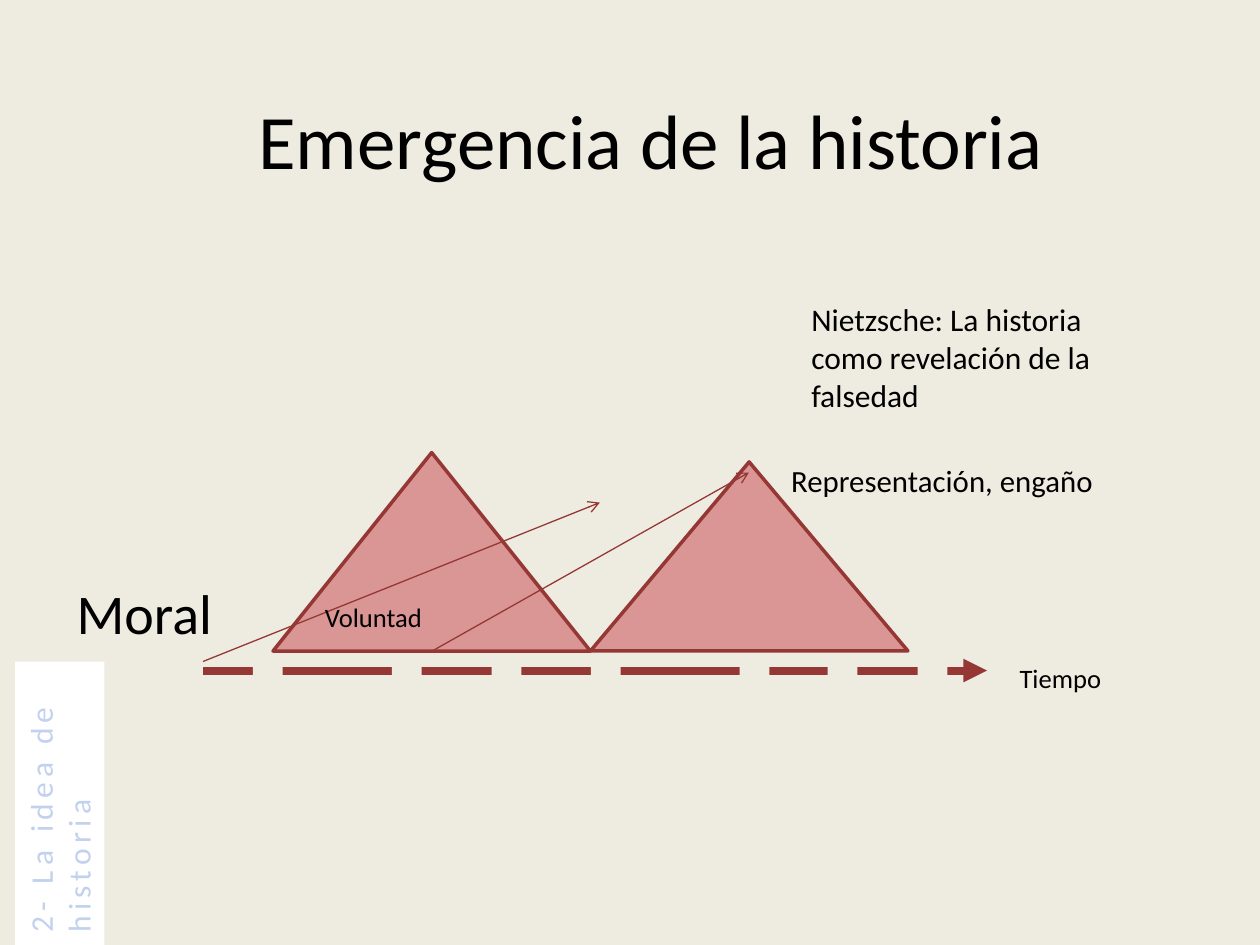
import pptx
import pptx.dml.color
import pptx.enum.shapes
import pptx.enum.text
import pptx.oxml
import pptx.oxml.ns
import pptx.util

Pt = pptx.util.Pt
SHAPES = pptx.enum.shapes.MSO_SHAPE
ALIGN = pptx.enum.text.PP_ALIGN
ANCHOR = pptx.enum.text.MSO_ANCHOR

FONT = "Calibri"
PAPER, INK, WHITE = "EEECE1", "000000", "FFFFFF"
ROSE, WINE, PALE_BLUE = "D99694", "953735", "C2D1ED"

# text, (left, top, width, height), size
TITLE = ("Emergencia de la historia", (48, 34, 648, 90), 44)
QUOTE = ("Nietzsche: La historia como revelación de la falsedad",
         (456.5, 168, 193, 72.7), 18)
SECTION = ("2- La idea de historia", (-46.8, 433.5, 162, 51), 18)
# the same, then line spacing
LABELS = [
    ("Moral", (36.7, 327, 102, 51), 32, 1),
    ("Tiempo", (575.5, 378, 85, 22.3), 15.2, 0.8),
    ("Voluntad", (178.5, 343.5, 85, 22.3), 15.2, 0.8),
    ("Representación, engaño", (445, 264.3, 198.7, 39.6), 17.6, 0.8),
]
HANGING = 27

BASELINE, TRIANGLE_LEFT, TRIANGLE_WIDTH = 372, 156, 181.4
TRIANGLE_HEIGHTS = [113.4, 108]

# start, end, line width, arrowhead
TIME_AXIS = ((116, 383.2), (564, 383.2), 4.5, "triangle")
RISING_ARROWS = [
    ((116, 378), (342.8, 287.2), 0.75, "arrow"),
    ((247, 372), (428, 270), 0.75, "arrow"),
]
GAP_LEFTS = [144.6, 224, 281, 337.7, 422.7, 473, 524.4]
GAP_TOP, GAP_WIDTH, GAP_HEIGHT = 378, 17, 11.4


def color(hex_code):
    return pptx.dml.color.RGBColor.from_string(hex_code)


def points(values):
    return [Pt(value) for value in values]


def add_filled(slide, preset, box, fill, outline=None):
    shape = slide.shapes.add_shape(preset, *points(box))
    shape.shadow.inherit = False
    shape.fill.solid()
    shape.fill.fore_color.rgb = color(fill)
    if outline:
        shape.line.color.rgb = color(outline)
        shape.line.width = Pt(2)
    else:
        shape.line.fill.background()
    return shape


def write(shape, text, size, ink=INK, align=ALIGN.LEFT, anchor=ANCHOR.TOP):
    frame = shape.text_frame
    frame.word_wrap = True
    frame.vertical_anchor = anchor
    paragraph = frame.paragraphs[0]
    paragraph.text = text
    paragraph.alignment = align
    paragraph.font.name = FONT
    paragraph.font.size = Pt(size)
    paragraph.font.color.rgb = color(ink)
    return paragraph


def add_text(slide, text, box, size, **style):
    return write(slide.shapes.add_textbox(*points(box)), text, size, **style)


def add_arrow(slide, start, end, width, head):
    arrow = slide.shapes.add_connector(
        pptx.enum.shapes.MSO_CONNECTOR.STRAIGHT, *points(start + end))
    arrow.line.color.rgb = color(WINE)
    arrow.line.width = Pt(width)
    tail = pptx.oxml.parse_xml(
        f'<a:tailEnd {pptx.oxml.ns.nsdecls("a")} type="{head}"/>')
    arrow.line._get_or_add_ln().append(tail)
    arrow._element.spPr.append(pptx.oxml.parse_xml(
        f'<a:effectLst {pptx.oxml.ns.nsdecls("a")}/>'))


def add_label(slide, text, box, size, spacing):
    paragraph = add_text(slide, text, box, size)
    paragraph.line_spacing = spacing
    properties = paragraph._p.get_or_add_pPr()
    properties.set("marL", str(Pt(HANGING)))
    properties.set("indent", str(-Pt(HANGING)))


def add_section_tab(slide, text, box, size):
    tab = add_filled(slide, SHAPES.RECTANGLE, box, WHITE)
    tab.rotation = 270
    paragraph = write(tab, text, size, ink=PALE_BLUE)
    paragraph.runs[0].font._element.set("spc", "300")


def main():
    deck = pptx.Presentation()
    deck.slide_width, deck.slide_height = points((720, 540))
    slide = deck.slides.add_slide(deck.slide_layouts[6])
    slide.background.fill.solid()
    slide.background.fill.fore_color.rgb = color(PAPER)

    add_text(slide, *TITLE, align=ALIGN.CENTER, anchor=ANCHOR.MIDDLE)
    add_arrow(slide, *TIME_AXIS)
    for index, height in enumerate(TRIANGLE_HEIGHTS):
        left = TRIANGLE_LEFT + index * TRIANGLE_WIDTH
        add_filled(slide, SHAPES.ISOSCELES_TRIANGLE,
                   (left, BASELINE - height, TRIANGLE_WIDTH, height), ROSE, WINE)
    for arrow in RISING_ARROWS:
        add_arrow(slide, *arrow)
    for left in GAP_LEFTS:
        add_filled(slide, SHAPES.RECTANGLE,
                   (left, GAP_TOP, GAP_WIDTH, GAP_HEIGHT), PAPER)
    add_text(slide, *QUOTE)
    for label in LABELS:
        add_label(slide, *label)
    add_section_tab(slide, *SECTION)

    deck.save("out.pptx")


if __name__ == "__main__":
    main()
